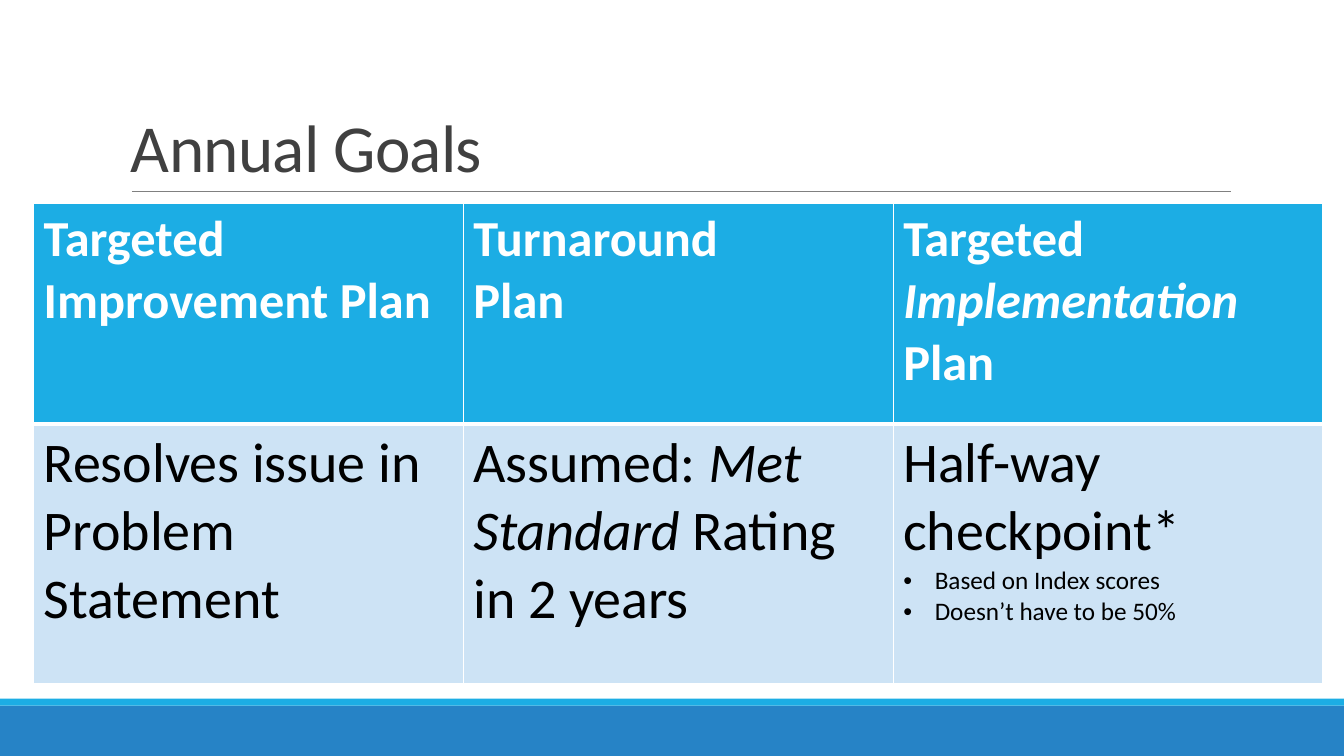
from lxml.etree import SubElement
from pptx import Presentation
from pptx.dml.color import RGBColor
from pptx.enum.shapes import MSO_CONNECTOR, MSO_SHAPE
from pptx.enum.text import MSO_ANCHOR
from pptx.oxml.ns import qn
from pptx.util import Pt

WHITE = RGBColor(0xFF, 0xFF, 0xFF)
BLACK = RGBColor(0, 0, 0)
CYAN = RGBColor(0x1C, 0xAD, 0xE4)
BLUE = RGBColor(0x26, 0x83, 0xC6)
PALE_BLUE = RGBColor(0xCD, 0xE3, 0xF5)
DARK_GRAY = RGBColor(0x40, 0x40, 0x40)
GRAY = RGBColor(0x80, 0x80, 0x80)
FONT = "Calibri"
WIDTH, HEIGHT = 960, 540


def add_border(cell, side, points):
    line = SubElement(cell._tc.get_or_add_tcPr(), qn(f"a:{side}"), w=str(Pt(points)))
    fill = SubElement(line, qn("a:solidFill"))
    SubElement(fill, qn("a:srgbClr"), val=str(WHITE))


def add_bullet(para):
    properties = para._p.get_or_add_pPr()
    properties.set("marL", str(Pt(22.5)))
    properties.set("indent", str(Pt(-22.5)))
    SubElement(properties, qn("a:buFont"), typeface="Arial")
    SubElement(properties, qn("a:buChar"), char="•")


deck = Presentation()
deck.slide_width, deck.slide_height = Pt(WIDTH), Pt(HEIGHT)
page = deck.slides.add_slide(deck.slide_layouts[6])

# Footer bands
for top, height, color in [(504, 36, BLUE), (499, 5, CYAN)]:
    band = page.shapes.add_shape(MSO_SHAPE.RECTANGLE, 0, Pt(top), Pt(WIDTH), Pt(height))
    band.shadow.inherit = False
    band.fill.solid()
    band.fill.fore_color.rgb = color
    band.line.fill.background()

# Title and its rule
rule = page.shapes.add_connector(
    MSO_CONNECTOR.STRAIGHT, Pt(94.3), Pt(136.8), Pt(879), Pt(136.8))
rule.line.color.rgb = GRAY
rule.line.width = Pt(0.5)
SubElement(rule._element.spPr, qn("a:effectLst"))

title = page.shapes.add_textbox(Pt(86.4), Pt(22.5), Pt(792), Pt(114.3))
title.text_frame.word_wrap = True
title.text_frame.vertical_anchor = MSO_ANCHOR.BOTTOM
para = title.text_frame.paragraphs[0]
para.line_spacing = 0.85
span = para.add_run()
span.text = "Annual Goals"
span.font.name, span.font.size = FONT, Pt(48)
span.font.color.rgb = DARK_GRAY
span._r.get_or_add_rPr().set("spc", "-50")

# Goals table: each cell lists paragraphs, each paragraph lists (text, italic) spans
ROWS = [
    [
        [[("Targeted Improvement Plan", False)]],
        [[("Turnaround", False)], [("Plan", False)]],
        [[("Targeted ", False), ("Implementation", True), (" Plan", False)]],
    ],
    [
        [[("Resolves issue in Problem Statement", False)]],
        [[("Assumed: ", False), ("Met Standard", True), (" Rating in 2 years", False)]],
        [[("Half-way checkpoint*", False)],
         [("Based on Index scores", False)],
         [("Doesn’t have to be 50%", False)]],
    ],
]
ROW_STYLES = [(157.5, CYAN, WHITE, 36, True, 3), (185, PALE_BLUE, BLACK, 40, False, 1)]

table = page.shapes.add_table(2, 3, Pt(24), Pt(145.5), Pt(921), Pt(342.5)).table
for column in table.columns:
    column.width = Pt(307)

for row_index, (height, fill, ink, size, bold, bottom) in enumerate(ROW_STYLES):
    table.rows[row_index].height = Pt(height)
    top = 3 if row_index else 1
    for column_index, paragraphs in enumerate(ROWS[row_index]):
        cell = table.cell(row_index, column_index)
        for side, points in [("lnL", 1), ("lnR", 1), ("lnT", top), ("lnB", bottom)]:
            add_border(cell, side, points)
        cell.fill.solid()
        cell.fill.fore_color.rgb = fill

        frame = cell.text_frame
        for index, spans in enumerate(paragraphs):
            para = frame.add_paragraph() if index else frame.paragraphs[0]
            is_bullet = row_index == 1 and index > 0
            if is_bullet:
                add_bullet(para)
            para.font.name = FONT
            para.font.size = Pt(18 if is_bullet else size)
            para.font.bold = bold
            para.font.color.rgb = ink
            for text, italic in spans:
                span = para.add_run()
                span.text = text
                if italic:
                    span.font.italic = True

deck.save("out.pptx")
